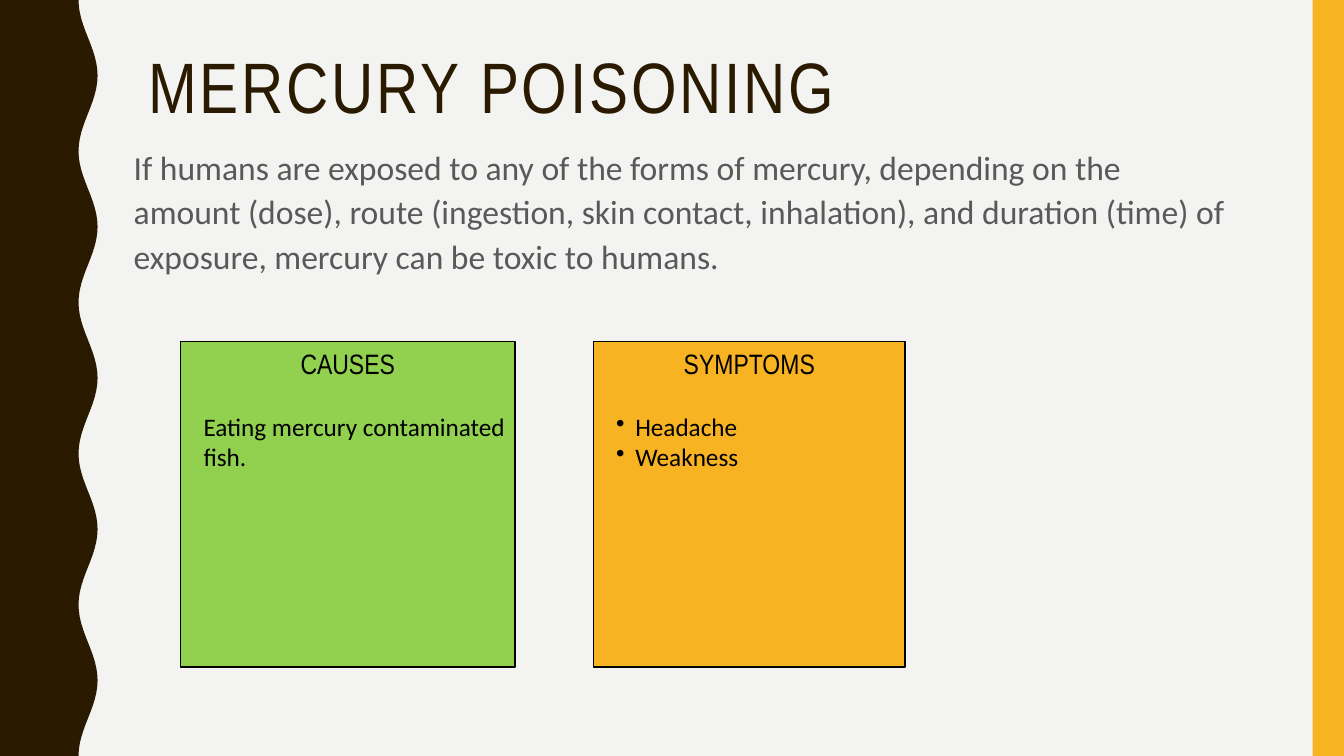
from math import cos, pi

from lxml import etree
from pptx import Presentation
from pptx.dml.color import RGBColor
from pptx.enum.shapes import MSO_SHAPE as SHAPE
from pptx.enum.text import MSO_ANCHOR as ANCHOR, MSO_AUTO_SIZE as AUTO, PP_ALIGN as ALIGN
from pptx.oxml.ns import qn
from pptx.util import Cm, Pt

COLORS = {
    "background": "F3F3F2",
    "brown": "2A1A00",
    "amber": "F8B323",
    "green": "92D050",
    "grey": "595959",
    "black": "000000",
}
HEADING_FONT, BODY_FONT = "Arial Narrow", "Calibri"
WIDTH, HEIGHT = 33.87, 19.05


def rgb(name):
    return RGBColor.from_string(COLORS[name])


def style_shape(sp, fill, line=None):
    sp.shadow.inherit = False
    sp.fill.solid()
    sp.fill.fore_color.rgb = rgb(fill)
    if line:
        sp.line.color.rgb = rgb(line)
        sp.line.width = Pt(1)
    else:
        sp.line.fill.background()


def style_text(p, font, size, color, align=ALIGN.LEFT):
    p.alignment = align
    p.font.name, p.font.size = font, Pt(size)
    p.font.color.rgb = rgb(color)


def indent(p, left, first=0, bullet=None):
    pPr = p._p.get_or_add_pPr()
    pPr.set("marL", str(Cm(left)))
    pPr.set("indent", str(Cm(first)))
    if bullet:
        # The bullet belongs before the default run properties
        mark = etree.Element(qn("a:buChar"), char=bullet)
        pPr.find(qn("a:defRPr")).addprevious(mark)


def add_wavy_edge(s, middle, swing, waves, steps=24):
    """Left band whose right side is a cosine wave down the slide."""
    count = waves * steps
    wave = [(Cm(middle - swing * cos(2 * pi * i / steps)), Cm(HEIGHT * i / count))
            for i in range(count + 1)]
    fb = s.shapes.build_freeform(0, 0)
    fb.add_line_segments(wave + [(0, Cm(HEIGHT))], close=True)
    style_shape(fb.convert_to_shape(), "brown")


def add_side_bar(s, width):
    sp = s.shapes.add_shape(SHAPE.RECTANGLE, Cm(WIDTH - width), 0, Cm(width), Cm(HEIGHT))
    style_shape(sp, "amber")


def set_title(s, left, top, width, height, text):
    sp = s.shapes.title
    sp.left, sp.top, sp.width, sp.height = Cm(left), Cm(top), Cm(width), Cm(height)
    tf = sp.text_frame
    tf.auto_size, tf.vertical_anchor = AUTO.NONE, ANCHOR.MIDDLE
    p = tf.paragraphs[0]
    r = p.add_run()
    r.text = text
    r.font._element.set("spc", "200")  # letter spacing of 2 pt
    p.line_spacing = 0.9
    style_text(p, HEADING_FONT, 51, "brown")


def add_intro(s, left, top, width, height, text):
    sp = s.shapes.add_textbox(Cm(left), Cm(top), Cm(width), Cm(height))
    tf = sp.text_frame
    tf.word_wrap = True
    p = tf.paragraphs[0]
    p.text = text
    p.line_spacing, p.space_before = 1.1, Pt(7)
    style_text(p, BODY_FONT, 24, "grey")


def add_panel(s, left, top, width, height, fill, heading, items, bullet=None):
    sp = s.shapes.add_shape(SHAPE.RECTANGLE, Cm(left), Cm(top), Cm(width), Cm(height))
    style_shape(sp, fill, "black")
    tf = sp.text_frame
    tf.word_wrap, tf.vertical_anchor = True, ANCHOR.TOP
    p = tf.paragraphs[0]
    p.text = heading
    style_text(p, HEADING_FONT, 20, "black", ALIGN.CENTER)
    for i, item in enumerate(items):
        p = tf.add_paragraph()
        p.text = item
        p.space_before = Pt(0 if i else 22)
        style_text(p, BODY_FONT, 18, "black")
        if bullet:
            indent(p, 0.8, -0.48, bullet)
        else:
            indent(p, 0.33)


def build_slide(prs):
    s = prs.slides.add_slide(prs.slide_layouts[5])
    s.background.fill.solid()
    s.background.fill.fore_color.rgb = rgb("background")

    # Decoration at both sides
    add_wavy_edge(s, 2.22, 0.24, waves=5)
    add_side_bar(s, 0.79)

    # Title and introduction
    set_title(s, 3.48, 1.07, 28.27, 2.44, "MERCURY POISONING")
    add_intro(s, 3.12, 3.48, 28.27, 4.09,
              "If humans are exposed to any of the forms of mercury, depending on the "
              "amount (dose), route (ingestion, skin contact, inhalation), and duration "
              "(time) of exposure, mercury can be toxic to humans.")

    # Panels
    top, height = 8.61, 8.2
    add_panel(s, 4.55, top, 8.43, height, "green", "CAUSES",
              ["Eating mercury contaminated fish."])
    add_panel(s, 14.96, top, 7.85, height, "amber", "SYMPTOMS",
              ["Headache", "Weakness"], bullet="•")


def main():
    prs = Presentation()
    prs.slide_width, prs.slide_height = Cm(WIDTH), Cm(HEIGHT)
    build_slide(prs)
    prs.save("out.pptx")


if __name__ == "__main__":
    main()
